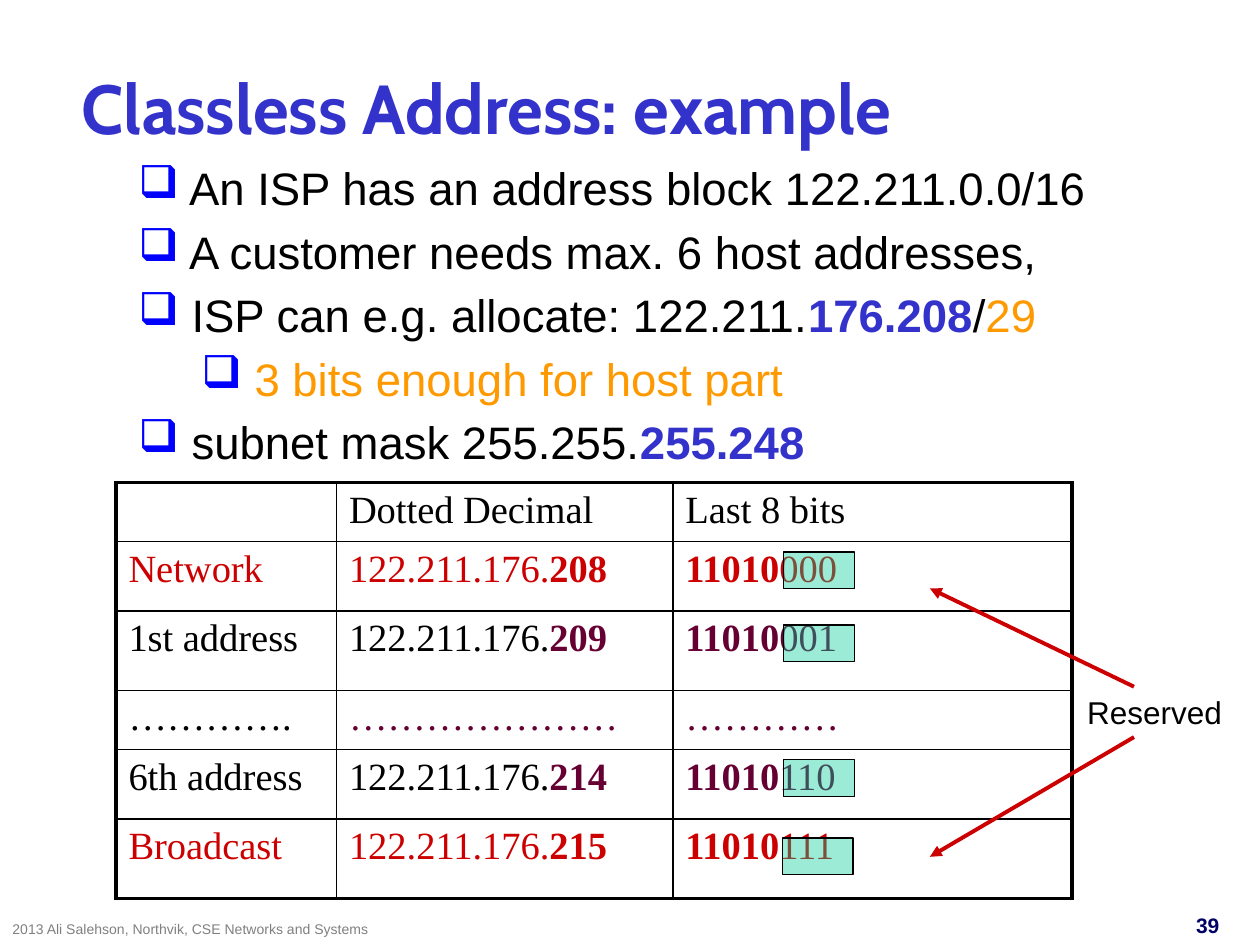
from dataclasses import dataclass

from lxml.etree import SubElement
from pptx import Presentation
from pptx.dml.color import RGBColor
from pptx.enum.shapes import MSO_CONNECTOR as Connector, MSO_SHAPE as Preset
from pptx.enum.text import MSO_ANCHOR as Anchor, PP_ALIGN as Align
from pptx.oxml.ns import qn
from pptx.util import Inches, Pt


@dataclass(frozen=True)
class Theme:
    black: str = "000000"
    blue: str = "3333CC"
    bullet: str = "0000FF"
    orange: str = "FF9900"
    red: str = "CC0000"
    plum: str = "660033"
    gray: str = "808080"
    navy: str = "000066"
    green: str = "00CC99"
    heading: str = "Cabin"
    sans: str = "Arial"
    serif: str = "Times New Roman"
    title_size: float = 39.6
    body_size: float = 26
    table_size: float = 22
    label_size: float = 18
    number_size: float = 12
    footer_size: float = 8
    thin: float = 1
    thick: float = 2.25


def write_text(paragraph, text, *, size, font, color, bold=False):
    run = paragraph.add_run()
    run.text = text
    run.font.size = Pt(size)
    run.font.name = font
    run.font.bold = bold
    run.font.color.rgb = RGBColor.from_string(color)


class SlideBuilder:
    def __init__(self, slide, theme):
        self.slide = slide
        self.theme = theme

    def text_box(self, box, wrap=True):
        shape = self.slide.shapes.add_textbox(*map(Inches, box))
        shape.text_frame.word_wrap = wrap
        return shape.text_frame

    def label(self, box, text, align=Align.LEFT, anchor=Anchor.TOP, wrap=True, **style):
        frame = self.text_box(box, wrap)
        frame.vertical_anchor = anchor
        frame.paragraphs[0].alignment = align
        write_text(frame.paragraphs[0], text, **style)

    def bullets(self, box, items):
        theme = self.theme
        frame = self.text_box(box)
        for index, (level, runs) in enumerate(items):
            paragraph = frame.add_paragraph() if index else frame.paragraphs[0]
            paragraph.level = level
            paragraph.space_before = Pt(0.2 * theme.body_size)
            properties = paragraph._p.get_or_add_pPr()
            properties.set("marL", str(Inches(0.25 + 0.5 * level)))
            properties.set("indent", str(Inches(-0.25)))
            color = SubElement(properties, qn("a:buClr"))
            SubElement(color, qn("a:srgbClr"), val=theme.bullet)
            SubElement(properties, qn("a:buChar"), char="❑")
            for text, color, bold in runs:
                write_text(paragraph, text, size=theme.body_size, font=theme.sans,
                           color=color, bold=bold)

    def table(self, left, top, widths, heights, rows):
        theme = self.theme
        frame = self.slide.shapes.add_table(
            len(heights), len(widths), Inches(left), Inches(top),
            Inches(sum(widths)), Inches(sum(heights)))
        table = frame.table
        table.first_row = table.horz_banding = False
        for column, width in zip(table.columns, widths):
            column.width = Inches(width)
        for row, height in zip(table.rows, heights):
            row.height = Inches(height)
        last_row, last_column = len(heights) - 1, len(widths) - 1
        for r, row in enumerate(rows):
            for c, runs in enumerate(row):
                cell = table.cell(r, c)
                self.borders(cell, lnL=c == 0, lnR=c == last_column,
                             lnT=r == 0, lnB=r == last_row)
                cell.fill.background()
                paragraph = cell.text_frame.paragraphs[0]
                paragraph.space_before = Pt(0.2 * theme.table_size)
                paragraph.font.size = Pt(theme.table_size)
                for text, color, bold in runs:
                    write_text(paragraph, text, size=theme.table_size,
                               font=theme.serif, color=color, bold=bold)

    def borders(self, cell, **outer_sides):
        properties = cell._tc.get_or_add_tcPr()
        for side, outer in outer_sides.items():
            width = self.theme.thick if outer else self.theme.thin
            line = SubElement(properties, qn(f"a:{side}"), w=str(Pt(width)))
            fill = SubElement(line, qn("a:solidFill"))
            SubElement(fill, qn("a:srgbClr"), val=self.theme.black)

    def highlight(self, left, top):
        shape = self.slide.shapes.add_shape(
            Preset.RECTANGLE, Inches(left), Inches(top), Inches(0.56), Inches(0.29))
        shape.shadow.inherit = False
        shape.fill.solid()
        shape.fill.fore_color.rgb = RGBColor.from_string(self.theme.green)
        color = shape._element.spPr.find(qn("a:solidFill"))[0]
        SubElement(color, qn("a:alpha"), val="39000")
        shape.line.color.rgb = RGBColor.from_string(self.theme.black)
        shape.line.width = Pt(0.75)

    def arrow(self, start, end):
        connector = self.slide.shapes.add_connector(
            Connector.STRAIGHT, *map(Inches, start + end))
        connector.line.color.rgb = RGBColor.from_string(self.theme.red)
        connector.line.width = Pt(self.theme.thick)
        SubElement(connector.line._get_or_add_ln(), qn("a:tailEnd"), type="triangle")
        SubElement(connector._element.spPr, qn("a:effectLst"))


def address_row(name, last_byte, host_bits, name_color, accent):
    return [
        [(name, name_color, False)],
        [("122.211.176.", name_color, False), (last_byte, accent, True)],
        [("11010", accent, True), (host_bits, accent, False)],
    ]


def main():
    theme = Theme()
    presentation = Presentation()
    presentation.slide_width, presentation.slide_height = Inches(10), Inches(7.5)
    slide = presentation.slides.add_slide(presentation.slide_layouts[6])
    builder = SlideBuilder(slide, theme)
    black, blue, orange = theme.black, theme.blue, theme.orange
    red, plum = theme.red, theme.plum

    builder.label((9.17, 7.19, 0.83, 0.3), "39", align=Align.CENTER,
                  size=theme.number_size, font=theme.sans, color=theme.navy, bold=True)
    builder.label((0.55, 0.47, 8.42, 0.75), "Classless Address: example",
                  anchor=Anchor.MIDDLE, size=theme.title_size, font=theme.heading,
                  color=blue, bold=True)
    builder.bullets((0, 1.22, 9.17, 5.58), [
        (2, [(" An ISP has an address block 122.211.0.0/16", black, False)]),
        (2, [(" A customer needs max. 6 host addresses,", black, False)]),
        (2, [(" ISP can e.g. allocate: 122.211.", black, False),
             ("176.208", blue, True), ("/", black, False), ("29", orange, False)]),
        (3, [(" 3 bits enough for host part", orange, False)]),
        (2, [(" subnet mask 255.255.", black, False), ("255.248", blue, True)]),
    ])
    builder.table(0.92, 3.83, [1.75, 2.67, 3.17], [0.47, 0.55, 0.63] * 2, [
        [[], [("Dotted Decimal", black, False)], [("Last 8 bits", black, False)]],
        address_row("Network", "208", "000", red, red),
        address_row("1st address", "209", "001", black, plum),
        [[("………….", black, False)], [("…………………", plum, False)],
         [("…………", plum, False)]],
        address_row("6th address", "214", "110", black, plum),
        address_row("Broadcast", "215", "111", red, red),
    ])
    builder.label((0, 7.26, 3.42, 0.23),
                  "2013 Ali Salehson, Northvik, CSE Networks and Systems",
                  size=theme.footer_size, font=theme.sans, color=theme.gray)
    for left, top in [(6.22, 4.38), (6.22, 4.96), (6.22, 6.03), (6.21, 6.65)]:
        builder.highlight(left, top)
    builder.label((8.53, 5.45, 1.28, 0.4), "Reserved", wrap=False,
                  size=theme.label_size, font=theme.sans, color=black)
    builder.arrow((9, 5.45), (7.38, 4.67))
    builder.arrow((9, 5.85), (7.38, 6.8))

    presentation.save("out.pptx")


if __name__ == "__main__":
    main()
